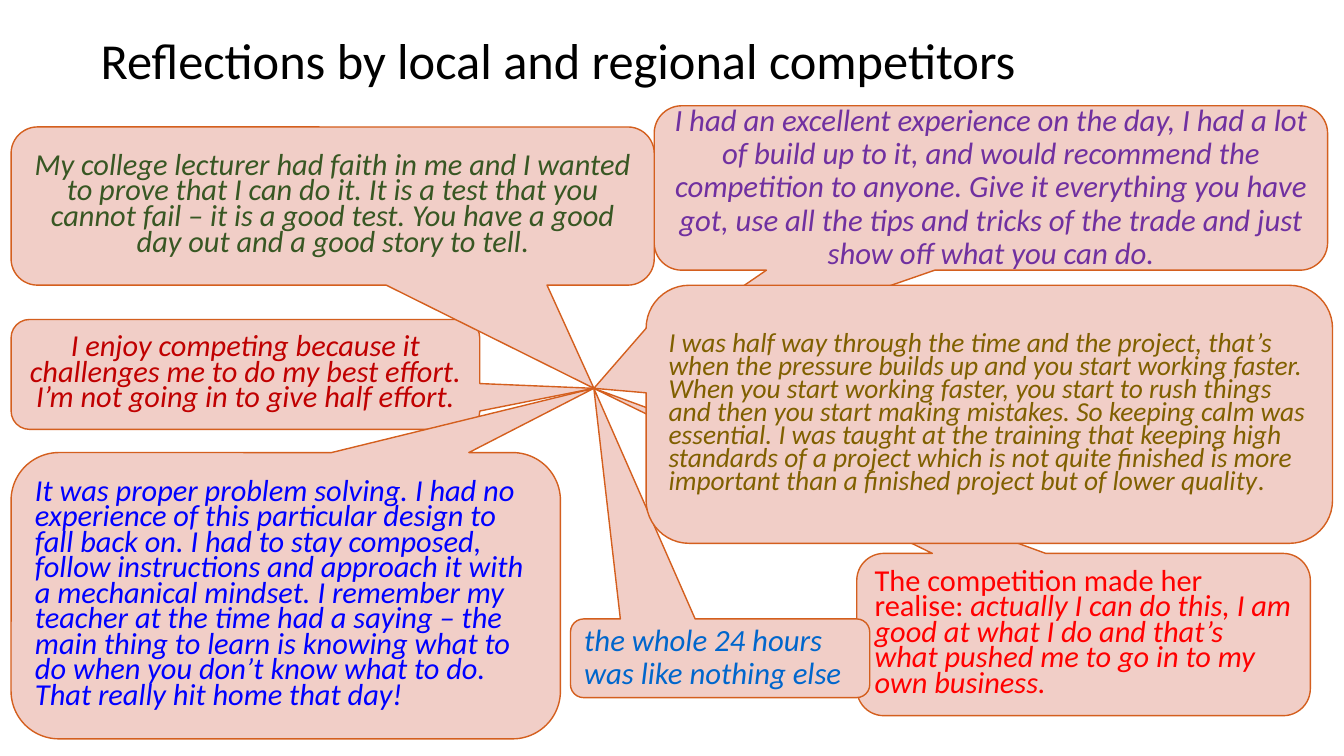
"""Build a slide of competitors' quotes in callouts that share one point."""
from dataclasses import dataclass

from pptx import Presentation
from pptx.dml.color import RGBColor
from pptx.enum.shapes import MSO_SHAPE
from pptx.enum.text import MSO_ANCHOR, PP_ALIGN
from pptx.util import Pt

CALLOUT = MSO_SHAPE.ROUNDED_RECTANGULAR_CALLOUT
MIDDLE = MSO_ANCHOR.MIDDLE
LEFT, CENTER = PP_ALIGN.LEFT, PP_ALIGN.CENTER


@dataclass(frozen=True)
class Theme:
    """Hold the colours and type sizes of the slide."""
    font: str = "Calibri"
    black: str = "000000"
    fill: str = "F1CEC7"
    line: str = "D45F1E"
    purple: str = "7030A0"
    crimson: str = "C00000"
    red: str = "FF0000"
    azure: str = "0066CC"
    blue: str = "0000FF"
    green: str = "385723"
    olive: str = "806000"
    title_size: float = 36
    quote_size: float = 22
    tight_size: float = 21.7
    small_size: float = 19.6
    normal_spacing: float = 0.9
    tight_spacing: float = 0.7
    corner: float = 0.167


THEME = Theme()
SLIDE_SIZE = (960, 540)
TITLE_BOX = (64.8, 15.1, 828, 60.5)
MEETING_POINT = (424.2, 277.4)

LOOSE = {"size": THEME.quote_size, "spacing": THEME.normal_spacing}
TIGHT = {"size": THEME.tight_size, "spacing": THEME.tight_spacing}
SMALL = {"size": THEME.small_size, "spacing": THEME.tight_spacing}

QUOTES = [
    ((467.3, 75.6, 481, 117.4), THEME.purple, CENTER, LOOSE, [
        ("I had an excellent experience on the day, I had a lot of build up to it, "
         "and would recommend the competition to anyone. Give it everything you "
         "have got, use all the tips and tricks of the trade and just show off "
         "what you can do.", True)]),
    ((7.9, 228.2, 334.8, 78.5), THEME.crimson, CENTER, TIGHT, [
        ("I enjoy competing because it challenges me to do my best effort. "
         "I’m not going in to give half effort.", True)]),
    ((612, 395.3, 324, 115.9), THEME.red, LEFT, TIGHT, [
        ("The competition made her realise: ", False),
        ("actually I can do this, I am good at what I do and that’s what pushed "
         "me to go in to my own business.", True)]),
    ((407.5, 442.1, 213.8, 56.2), THEME.azure, LEFT, LOOSE, [
        ("the whole 24 hours was like nothing else", True)]),
    ((7.9, 323.3, 392.4, 204.5), THEME.blue, LEFT, TIGHT, [
        ("It was proper problem solving. I had no experience of this particular "
         "design to fall back on. I had to stay composed, follow instructions and "
         "approach it with a mechanical mindset. I remember my teacher at the time "
         "had a saying – the main thing to learn is knowing what to do when you "
         "don’t know what to do. That really hit home that day!", True)]),
    ((7.9, 90.7, 459.4, 113), THEME.green, CENTER, TIGHT, [
        ("My college lecturer had faith in me and I wanted to prove that I can do "
         "it. It is a test that you cannot fail – it is a good test. You have a "
         "good day out and a good story to tell", True),
        (".", False)]),
    ((461.5, 203.8, 490.3, 184.3), THEME.olive, LEFT, SMALL, [
        ("I was half way through the time and the project, that’s when the "
         "pressure builds up and you start working faster. When you start working "
         "faster, you start to rush things and then you start making mistakes. So "
         "keeping calm was essential. I was taught at the training that keeping "
         "high standards of a project which is not quite finished is more "
         "important than a finished project but of lower quality", True),
        (".", False)]),
]


def apply_format(target, values):
    """Set each named attribute of the target."""
    for name, value in values.items():
        setattr(target, name, value)


def write_text(shape, runs, color, size, spacing, alignment):
    """Write one paragraph of (text, italic) runs in the shape."""
    frame = shape.text_frame
    apply_format(frame, {"word_wrap": True, "vertical_anchor": MIDDLE})
    paragraph = frame.paragraphs[0]
    apply_format(paragraph, {"alignment": alignment, "line_spacing": spacing,
                             "space_before": Pt(0)})
    for text, italic in runs:
        run = paragraph.add_run()
        run.text = text
        apply_format(run.font, {"name": THEME.font, "size": Pt(size), "italic": italic})
        run.font.color.rgb = RGBColor.from_string(color)


def add_title(slide, box, text):
    """Add the slide title in the given box."""
    shape = slide.shapes.add_textbox(*map(Pt, box))
    write_text(shape, [(text, False)], THEME.black, THEME.title_size,
               THEME.normal_spacing, LEFT)


def add_quote(slide, box, target, color, alignment, style, runs):
    """Add a callout in the given box whose tail reaches the target."""
    left, top, width, height = box
    shape = slide.shapes.add_shape(CALLOUT, *map(Pt, box))
    shape.shadow.inherit = False
    shape.adjustments[0] = (target[0] - left) / width - 0.5
    shape.adjustments[1] = (target[1] - top) / height - 0.5
    shape.adjustments[2] = THEME.corner
    shape.fill.solid()
    shape.fill.fore_color.rgb = RGBColor.from_string(THEME.fill)
    shape.line.color.rgb = RGBColor.from_string(THEME.line)
    shape.line.width = Pt(1)
    write_text(shape, runs, color, alignment=alignment, **style)


def main():
    """Build and save the presentation."""
    presentation = Presentation()
    width, height = map(Pt, SLIDE_SIZE)
    apply_format(presentation, {"slide_width": width, "slide_height": height})
    slide = presentation.slides.add_slide(presentation.slide_layouts[6])
    add_title(slide, TITLE_BOX, "Reflections by local and regional competitors")
    for box, color, alignment, style, runs in QUOTES:
        add_quote(slide, box, MEETING_POINT, color, alignment, style, runs)
    presentation.save("out.pptx")


if __name__ == "__main__":
    main()
